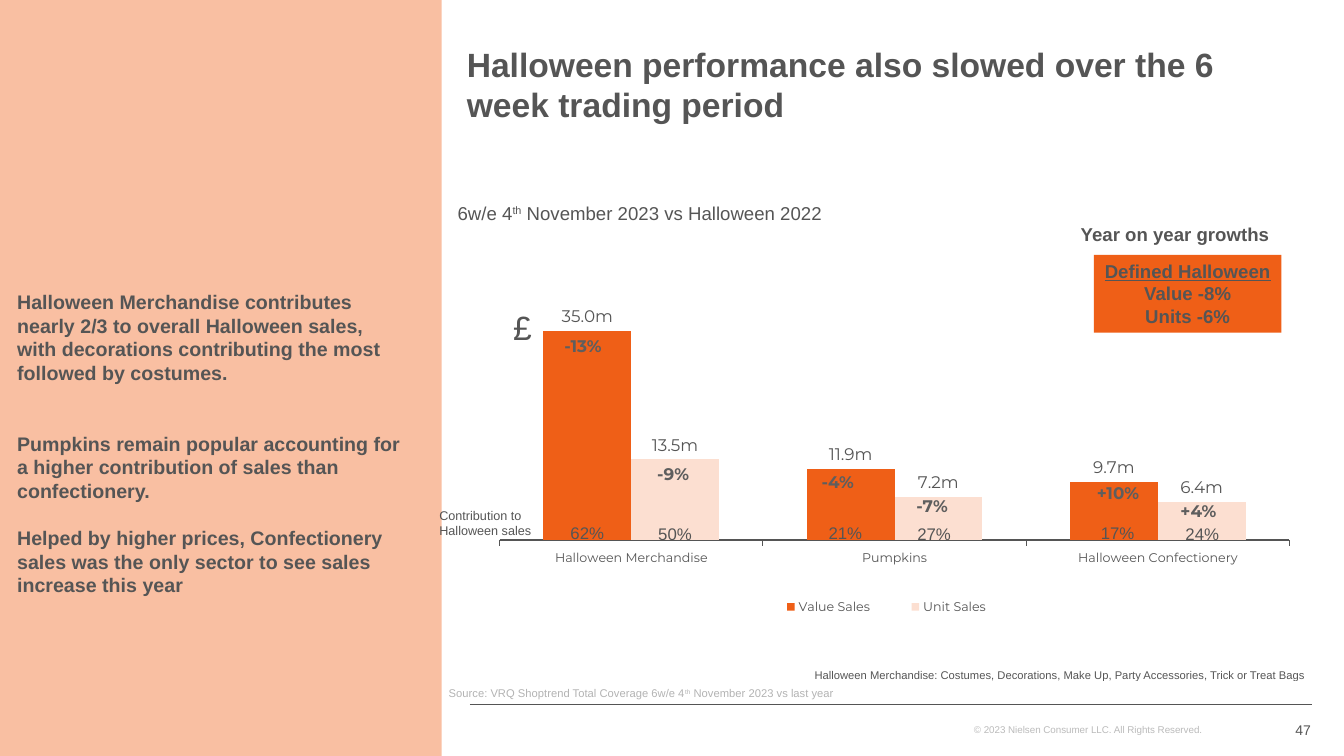
from dataclasses import dataclass

from lxml import etree
from pptx import Presentation
from pptx.chart.data import CategoryChartData
from pptx.dml.color import RGBColor
from pptx.enum.chart import XL_CHART_TYPE as ChartType
from pptx.enum.chart import XL_LABEL_POSITION as LabelPosition
from pptx.enum.chart import XL_LEGEND_POSITION as LegendPosition
from pptx.enum.chart import XL_TICK_LABEL_POSITION as TickLabelPosition
from pptx.enum.chart import XL_TICK_MARK as TickMark
from pptx.enum.shapes import MSO_CONNECTOR as Connector
from pptx.enum.shapes import MSO_SHAPE as Shape
from pptx.enum.text import MSO_ANCHOR as Anchor
from pptx.enum.text import PP_ALIGN as Align
from pptx.oxml import parse_xml
from pptx.oxml.ns import nsdecls, qn
from pptx.util import Pt

EMU_PER_PX = 9144


@dataclass(frozen=True)
class Theme:
    ink: str = "555555"
    growth: str = "5E5E5E"
    source: str = "B3B3B3"
    copyright: str = "BBBBBB"
    panel: str = "F9BFA2"
    value: str = "EF5F17"
    unit: str = "FCDFD1"
    body_font: str = "Arial"
    chart_font: str = "Montserrat"
    title: float = 24
    message: float = 14
    heading: float = 13.3
    label: float = 12
    page: float = 10
    small: float = 9
    note: float = 8
    legal: float = 7


THEME = Theme()
FLUSH = (0, 5, 0, 5)
PADDED = (10, 5, 10, 5)


def px(*lengths):
    return [length * EMU_PER_PX for length in lengths]


def rgb(colour):
    return RGBColor.from_string(colour)


def style_font(font, size, colour=THEME.ink, name=THEME.body_font, bold=False):
    font.size = Pt(size)
    font.color.rgb = rgb(colour)
    font.name = name
    font.bold = bold


def write_text(frame, paragraphs, size=THEME.label, align=Align.LEFT, anchor=Anchor.TOP,
               margins=PADDED, wrap=True, gaps=(), underlined=(), **font_format):
    frame.word_wrap = wrap
    frame.vertical_anchor = anchor
    (frame.margin_left, frame.margin_top,
     frame.margin_right, frame.margin_bottom) = px(*margins)
    for index, text in enumerate(paragraphs):
        paragraph = frame.paragraphs[0] if index == 0 else frame.add_paragraph()
        paragraph.alignment = align
        if index and gaps:
            paragraph.space_before = Pt(gaps[index - 1])
        for part, piece in enumerate(text.split("^")):
            run = paragraph.add_run()
            run.text = piece
            style_font(run.font, size, **font_format)
            run.font.underline = index in underlined
            if part % 2:
                run.font._element.set("baseline", "30000")


def add_text(slide, box, *paragraphs, **text_format):
    shape = slide.shapes.add_textbox(*px(*box))
    write_text(shape.text_frame, paragraphs, **text_format)


def add_block(slide, box, colour, *paragraphs, **text_format):
    shape = slide.shapes.add_shape(Shape.RECTANGLE, *px(*box))
    shape.shadow.inherit = False
    shape.fill.solid()
    shape.fill.fore_color.rgb = rgb(colour)
    shape.line.fill.background()
    write_text(shape.text_frame, paragraphs, **text_format)


def add_rule(slide, left, right, top):
    line = slide.shapes.add_connector(Connector.STRAIGHT, *px(left, top, right, top))
    line.line.color.rgb = rgb(THEME.ink)
    line.line.width = Pt(1)
    etree.SubElement(line._element.spPr, qn("a:effectLst"))


def manual_layout(left, top, width, height, **modes):
    settings = {**modes, "xMode": "edge", "yMode": "edge",
                "x": left, "y": top, "w": width, "h": height}
    places = "".join(f'<c:{tag} val="{value}"/>' for tag, value in settings.items())
    return parse_xml(
        f'<c:layout {nsdecls("c")}><c:manualLayout>{places}</c:manualLayout></c:layout>')


def place_chart_parts(chart):
    plot_area = chart._chartSpace.chart.plotArea
    legend = chart.legend._element
    for part in (plot_area, legend):
        for layout in part.findall(qn("c:layout")):
            part.remove(layout)
    plot_area.insert(0, manual_layout(0, 0.03, 0.98, 0.68, layoutTarget="inner"))
    legend.find(qn("c:legendPos")).addnext(manual_layout(0.31, 0.87, 0.34, 0.06))


def add_sales_chart(slide, box, categories, series_rows):
    data = CategoryChartData()
    data.categories = categories
    for name, values, _ in series_rows:
        data.add_series(name, values)
    chart = slide.shapes.add_chart(ChartType.COLUMN_CLUSTERED, *px(*box), data).chart
    style_font(chart.font, THEME.label, name=THEME.chart_font)
    chart.has_title = False
    chart.has_legend = True
    chart.legend.position = LegendPosition.BOTTOM
    chart.legend.include_in_layout = False
    style_font(chart.legend.font, THEME.small, name=THEME.chart_font)

    value_axis = chart.value_axis
    value_axis.visible = False
    value_axis.has_major_gridlines = False
    value_axis.minimum_scale = 0
    value_axis.maximum_scale = 40000000
    category_axis = chart.category_axis
    category_axis.major_tick_mark = TickMark.OUTSIDE
    category_axis.tick_label_position = TickLabelPosition.LOW
    category_axis.format.line.color.rgb = rgb(THEME.ink)
    category_axis.format.line.width = Pt(0.75)
    style_font(category_axis.tick_labels.font, THEME.small, name=THEME.chart_font)

    plot = chart.plots[0]
    plot.gap_width = 100
    plot.overlap = 0
    plot.vary_by_categories = False
    for series, (_, _, colour) in zip(plot.series, series_rows):
        series.format.fill.solid()
        series.format.fill.fore_color.rgb = rgb(colour)
        labels = series.data_labels
        labels.show_value = True
        labels.number_format = '0.0,,"m"'
        labels.number_format_is_linked = False
        labels.position = LabelPosition.OUTSIDE_END
        style_font(labels.font, THEME.label, name=THEME.chart_font)
    place_chart_parts(chart)


def add_note_table(slide, box, text):
    table = slide.shapes.add_table(1, 1, *px(*box)).table
    table.first_row = False
    table.horz_banding = False
    cell = table.cell(0, 0)
    cell.fill.background()
    write_text(cell.text_frame, [text], size=THEME.note, align=Align.RIGHT)
    cell.vertical_anchor = Anchor.BOTTOM
    cell.margin_left = cell.margin_top = cell.margin_right = cell.margin_bottom = 0


def main():
    presentation = Presentation()
    presentation.slide_width, presentation.slide_height = px(1333, 750)
    slide = presentation.slides.add_slide(presentation.slide_layouts[6])

    add_block(slide, (0, 0, 438, 750), THEME.panel)
    add_rule(slide, 466, 1301, 699)
    add_text(slide, (966, 713, 284, 22), "© 2023 Nielsen Consumer LLC. All Rights Reserved.",
             size=THEME.legal, colour=THEME.copyright, margins=FLUSH)
    add_text(slide, (1201, 704, 99, 40), "47", size=THEME.page, align=Align.RIGHT,
             anchor=Anchor.MIDDLE, margins=FLUSH)
    add_text(slide, (17, 336, 383, 261),
             "Halloween Merchandise contributes nearly 2/3 to overall Halloween sales, "
             "with decorations contributing the most followed by costumes.",
             "Pumpkins remain popular accounting for a higher contribution of sales than "
             "confectionery.",
             "Helped by higher prices, Confectionery sales was the only sector to see sales "
             "increase this year",
             size=THEME.message, bold=True, anchor=Anchor.BOTTOM, margins=FLUSH, gaps=(34, 17))
    add_text(slide, (445, 659, 831, 40),
             "Source: VRQ Shoptrend Total Coverage 6w/e 4^th^ November 2023 vs last year",
             size=THEME.note, colour=THEME.source, anchor=Anchor.BOTTOM, margins=FLUSH)
    add_sales_chart(
        slide, (495, 288, 800, 349),
        ["Halloween Merchandise", "Pumpkins", "Halloween Confectionery"],
        [("Value Sales", (35000000, 11900000, 9700000), THEME.value),
         ("Unit Sales", (13500000, 7200000, 6400000), THEME.unit)])
    add_text(slide, (444, 195, 387, 33), "6w/e 4^th^ November 2023 vs Halloween 2022",
             size=THEME.heading, wrap=False)

    for left, top, share in ((556, 514, "62%"), (812, 514, "21%"), (1082, 514, "17%"),
                             (643, 515, "50%"), (900, 515, "27%"), (1166, 515, "24%")):
        add_text(slide, (left, top, 54, 30), share, wrap=False)
    add_text(slide, (426, 499, 114, 40), "Contribution to Halloween sales", size=THEME.small)
    add_text(slide, (463, 63, 790, 65),
             "Halloween performance also slowed over the 6 week trading period",
             size=THEME.title, bold=True, anchor=Anchor.BOTTOM, margins=FLUSH)
    add_text(slide, (499, 300, 86, 50), "£", size=THEME.title)
    add_text(slide, (1062, 216, 209, 33), "Year on year growths",
             size=THEME.heading, bold=True, wrap=False)
    add_block(slide, (1085, 253, 186, 77), THEME.value,
              "Defined Halloween", "Value -8%", "Units -6%", size=THEME.heading, bold=True,
              align=Align.CENTER, wrap=False, underlined=(0,))
    add_note_table(slide, (449, 624, 846, 52),
                   "Halloween Merchandise: Costumes, Decorations, Make Up, "
                   "Party Accessories, Trick or Treat Bags")
    for left, top, growth in ((1078, 474, "+10%"), (805, 463, "-4%"), (899, 487, "-7%"),
                              (550, 328, "-13%"), (642, 455, "-9%"), (1161, 492, "+4%")):
        add_text(slide, (left, top, 80, 30), growth, bold=True,
                 colour=THEME.growth, name=THEME.chart_font)

    presentation.save("out.pptx")


if __name__ == "__main__":
    main()
